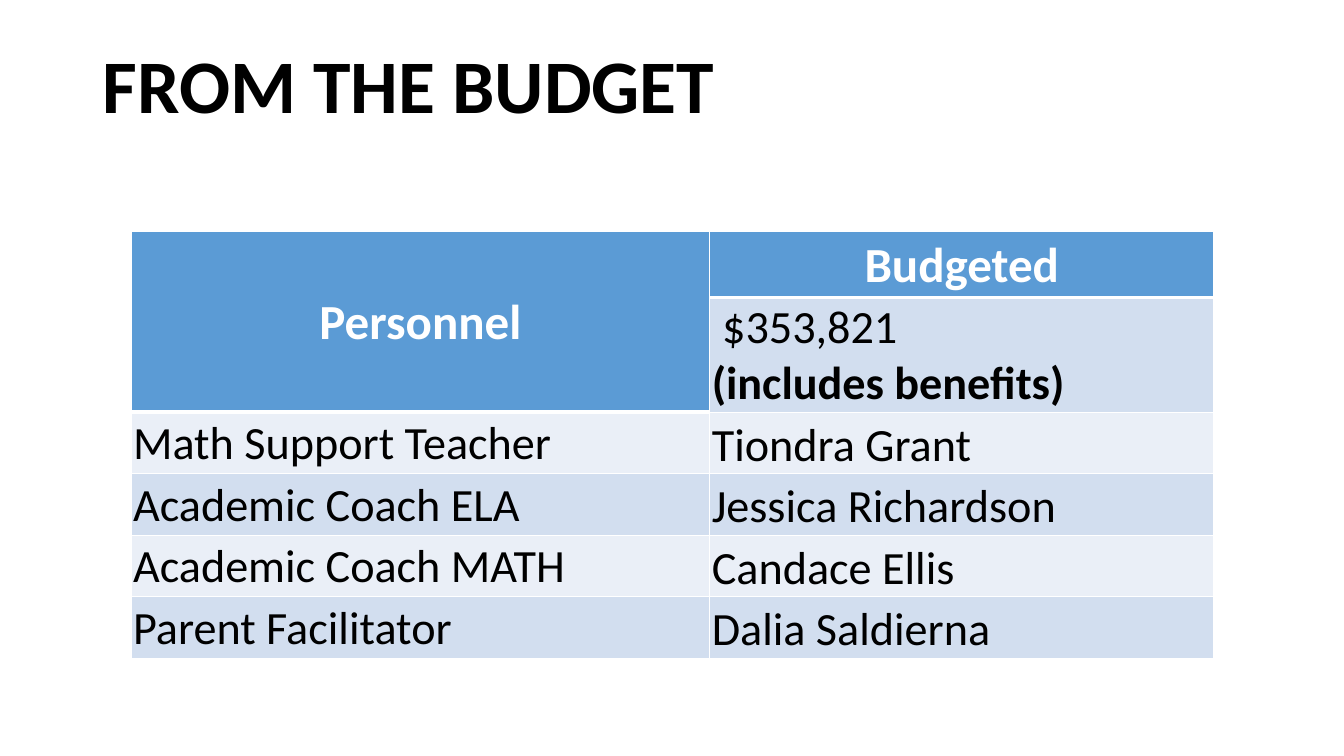
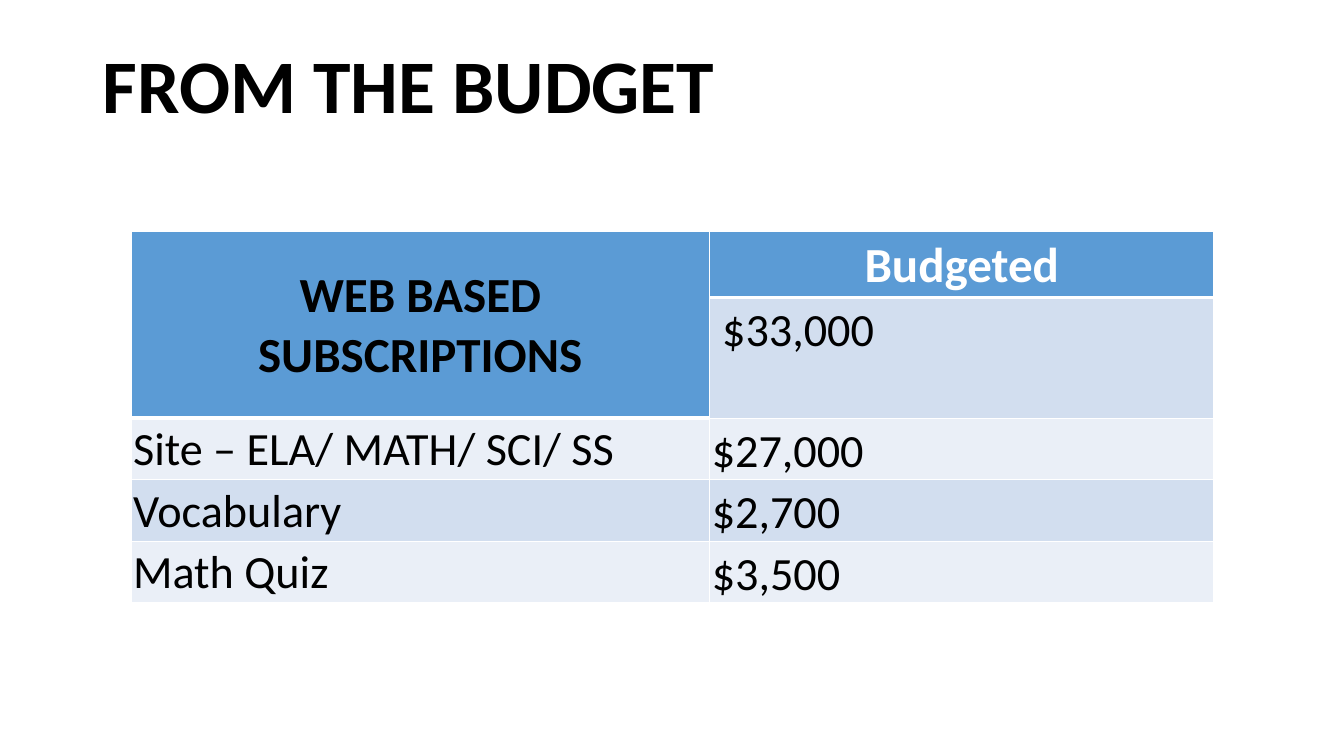
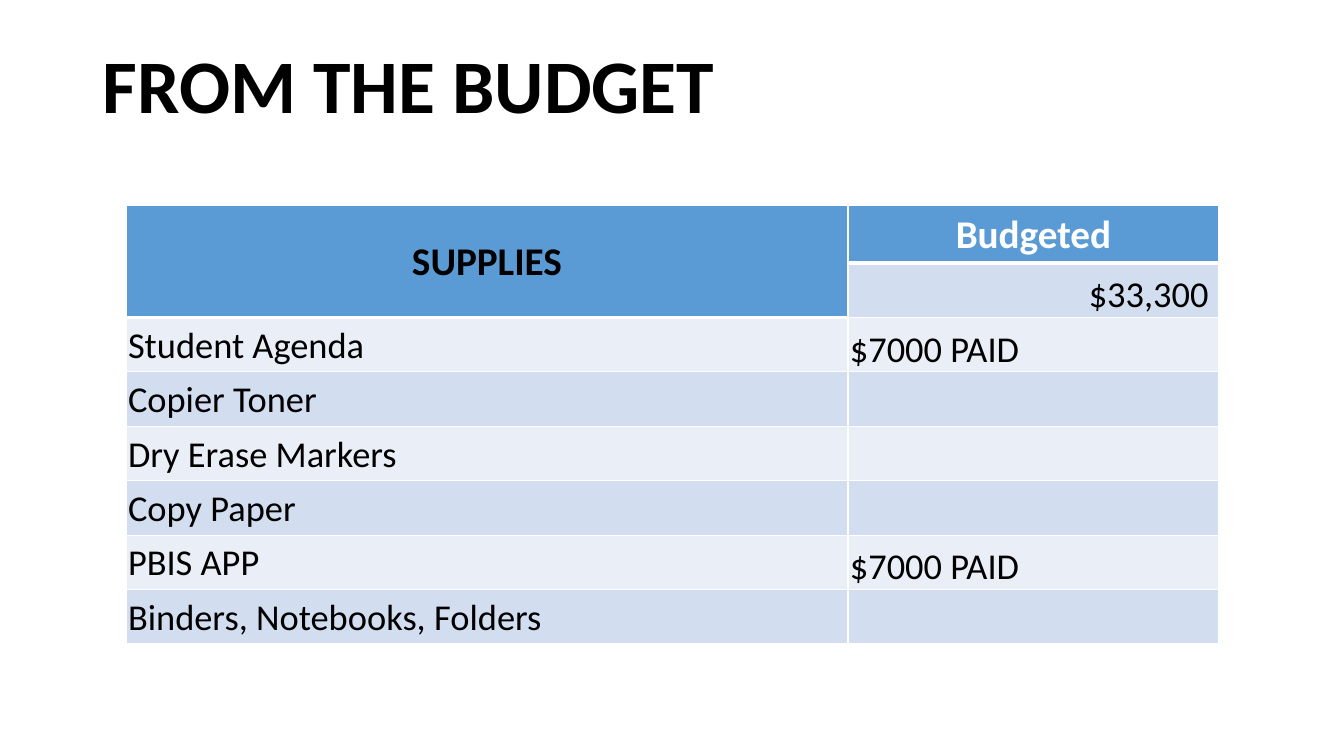
from dataclasses import dataclass

from lxml.etree import SubElement
from pptx import Presentation
from pptx.dml.color import RGBColor
from pptx.enum.text import MSO_ANCHOR, PP_ALIGN
from pptx.oxml.ns import qn
from pptx.slide import Slide
from pptx.table import _Cell
from pptx.util import Inches, Pt


@dataclass(frozen=True)
class Theme:
    font: str = "Calibri"
    black: str = "000000"
    white: str = "FFFFFF"
    header: str = "5B9BD5"
    bands: tuple[str, str] = ("EAEFF7", "D2DEEF")
    title_size: int = 54
    thin: int = 1
    thick: int = 3


@dataclass(frozen=True)
class Style:
    size: int
    color: str
    bold: bool = False
    align: PP_ALIGN = PP_ALIGN.LEFT
    anchor: MSO_ANCHOR = MSO_ANCHOR.MIDDLE
    side: float = 0.02
    top: float = 0.02


@dataclass(frozen=True)
class Budget:
    category: str
    total: str
    items: tuple[tuple[str, str], ...]
    note: str = ""
    category_color: str = "000000"
    left: float = 1.3
    top: float = 2.3
    columns: tuple[float, float] = (5.74, 5)
    header_height: float = 0.65
    total_height: float = 1.14
    item_height: float = 0.61
    header_size: int = 35
    body_size: int = 33
    total_align: PP_ALIGN = PP_ALIGN.LEFT
    total_anchor: MSO_ANCHOR = MSO_ANCHOR.MIDDLE
    total_inset: float = 0.02


THEME = Theme()
TITLE = "FROM THE BUDGET"
BUDGETS = (
    Budget(
        "Personnel", " $353,821",
        (
            ("Math Support Teacher", "Tiondra Grant"),
            ("Academic Coach ELA", "Jessica Richardson"),
            ("Academic Coach MATH", "Candace Ellis"),
            ("Parent Facilitator", "Dalia Saldierna"),
        ),
        note="(includes benefits)", category_color=THEME.white,
    ),
    Budget(
        "WEB BASED SUBSCRIPTIONS", " $33,000",
        (
            ("Site – ELA/ MATH/ SCI/ SS", "$27,000"),
            ("Vocabulary", "$2,700"),
            ("Math Quiz", "$3,500"),
        ),
        total_height=1.2, total_anchor=MSO_ANCHOR.TOP, total_inset=0.05,
    ),
    Budget(
        "SUPPLIES", "$33,300 ",
        (
            ("Student Agenda", "$7000 PAID"),
            ("Copier Toner", ""),
            ("Dry Erase Markers", ""),
            ("Copy Paper", ""),
            ("PBIS APP", "$7000 PAID"),
            ("Binders, Notebooks, Folders", ""),
        ),
        left=1.25, top=2.04, columns=(7.16, 3.68),
        header_height=0.57, total_height=0.54, item_height=0.54,
        header_size=28, body_size=26,
        total_align=PP_ALIGN.RIGHT, total_anchor=MSO_ANCHOR.BOTTOM,
    ),
)


def add_title(s: Slide) -> None:
    tf = s.shapes.add_textbox(Inches(0.92), Inches(0.32), Inches(11.5), Inches(1.02)).text_frame
    tf.word_wrap = True
    tf.vertical_anchor = MSO_ANCHOR.BOTTOM
    p = tf.paragraphs[0]
    p.text = TITLE
    p.line_spacing = 0.9
    p.font.name, p.font.size, p.font.bold = THEME.font, Pt(THEME.title_size), True
    p.font.color.rgb = RGBColor.from_string(THEME.black)


def write_cell(cell: _Cell, text: str, style: Style, note: str = "") -> None:
    """Write the text, followed by an optional bold paragraph."""
    cell.vertical_anchor = style.anchor
    cell.margin_left = cell.margin_right = Inches(style.side)
    cell.margin_top, cell.margin_bottom = Inches(style.top), 0
    tf = cell.text_frame
    tf.text = f"{text}\n{note}" if note else text
    for i, p in enumerate(tf.paragraphs):
        p.alignment = style.align
        p.font.name, p.font.size = THEME.font, Pt(style.size)
        p.font.bold = style.bold or i > 0
        p.font.color.rgb = RGBColor.from_string(style.color)


def rule_below(row: int, col: int) -> int:
    """Return the weight of the rule under a cell: thick under the headers."""
    return THEME.thick if row == 0 or (row, col) == (1, 0) else THEME.thin


def paint_cell(cell: _Cell, row: int, col: int) -> None:
    """Add the borders, then the fill, in the order the file format asks for."""
    weights = {
        "a:lnL": THEME.thin,
        "a:lnR": THEME.thin,
        "a:lnT": rule_below(row - 1, col) if row else THEME.thin,
        "a:lnB": rule_below(row, col),
    }
    tc_pr = cell._tc.get_or_add_tcPr()
    for tag, weight in weights.items():
        line = SubElement(tc_pr, qn(tag), w=str(Pt(weight)))
        SubElement(SubElement(line, qn("a:solidFill")), qn("a:srgbClr"), val=THEME.white)
    is_header = row == 0 or (row, col) == (1, 0)
    cell.fill.solid()
    cell.fill.fore_color.rgb = RGBColor.from_string(
        THEME.header if is_header else THEME.bands[row % 2]
    )


def add_budget_table(s: Slide, b: Budget) -> None:
    heights = [b.header_height, b.total_height] + [b.item_height] * len(b.items)
    table = s.shapes.add_table(
        len(heights), len(b.columns), Inches(b.left), Inches(b.top),
        Inches(sum(b.columns)), Inches(sum(heights)),
    ).table
    table.first_row = table.horz_banding = False
    for column, width in zip(table.columns, b.columns):
        column.width = Inches(width)
    for row, height in enumerate(heights):
        table.rows[row].height = Inches(height)
        for col in range(len(b.columns)):
            paint_cell(table.cell(row, col), row, col)

    table.cell(0, 0).merge(table.cell(1, 0))
    for col, (text, color) in enumerate(
        ((b.category, b.category_color), ("Budgeted", THEME.white))
    ):
        style = Style(b.header_size, color, bold=True, align=PP_ALIGN.CENTER, side=0.05)
        write_cell(table.cell(0, col), text, style)

    total = Style(b.body_size, THEME.black, align=b.total_align,
                  anchor=b.total_anchor, top=b.total_inset)
    write_cell(table.cell(1, 1), b.total, total, b.note)

    name_style = Style(b.body_size, THEME.black)
    value_style = Style(b.body_size, THEME.black, anchor=MSO_ANCHOR.BOTTOM)
    for row, (name, value) in enumerate(b.items, start=2):
        write_cell(table.cell(row, 0), name, name_style)
        if value:
            write_cell(table.cell(row, 1), value, value_style)


def main() -> None:
    prs = Presentation()
    prs.slide_width, prs.slide_height = Inches(13.33), Inches(7.5)
    for budget in BUDGETS:
        s = prs.slides.add_slide(prs.slide_layouts[6])
        add_title(s)
        add_budget_table(s, budget)
    prs.save("out.pptx")


if __name__ == "__main__":
    main()
